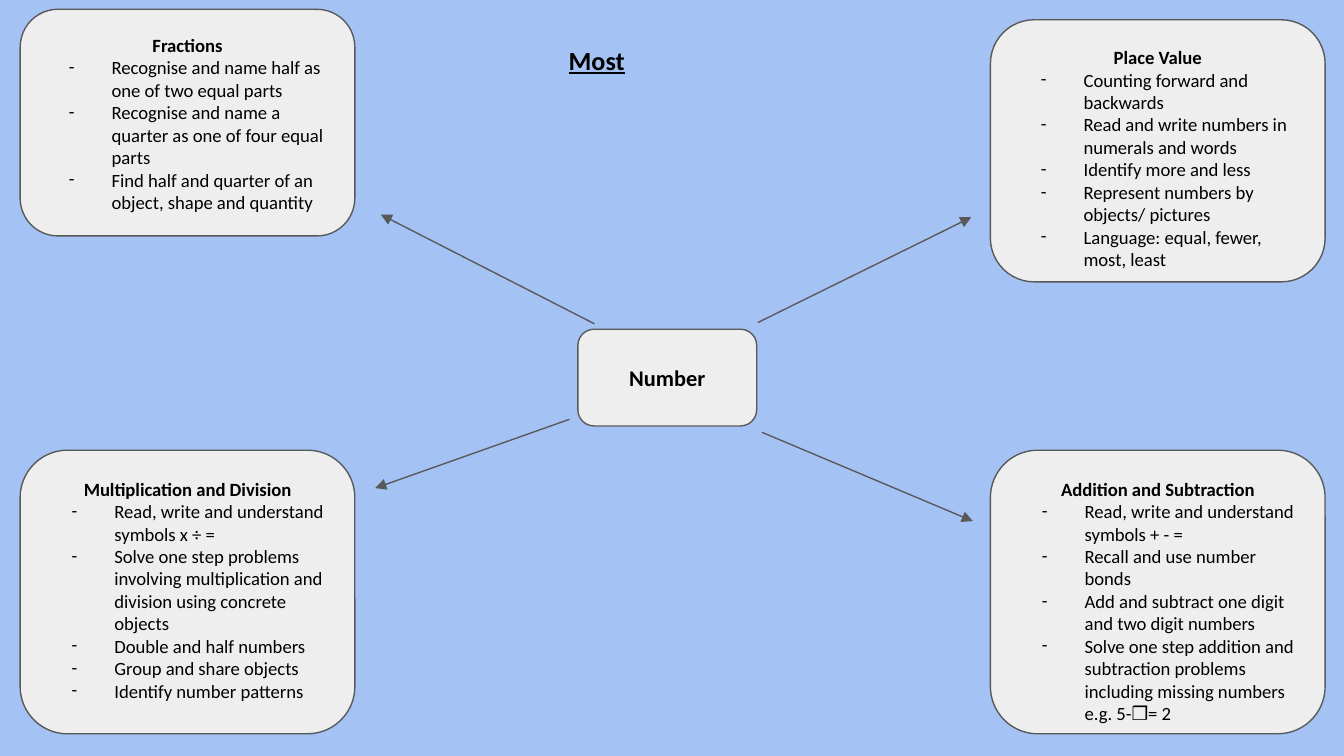
from dataclasses import dataclass

from lxml import etree
from pptx import Presentation
from pptx.dml.color import RGBColor
from pptx.enum.shapes import MSO_CONNECTOR, MSO_SHAPE
from pptx.enum.text import MSO_ANCHOR, PP_ALIGN
from pptx.oxml.ns import qn
from pptx.util import Pt

ROUND = MSO_SHAPE.ROUNDED_RECTANGLE
STRAIGHT = MSO_CONNECTOR.STRAIGHT
TOP, MIDDLE = MSO_ANCHOR.TOP, MSO_ANCHOR.MIDDLE
LEFT, CENTER = PP_ALIGN.LEFT, PP_ALIGN.CENTER


@dataclass(frozen=True)
class Theme:
    back: RGBColor = RGBColor(0xA4, 0xC2, 0xF4)
    panel: RGBColor = RGBColor(0xEE, 0xEE, 0xEE)
    edge: RGBColor = RGBColor(0x59, 0x59, 0x59)
    ink: RGBColor = RGBColor(0, 0, 0)
    font: str = "Calibri"
    title: float = 14
    hub: float = 12
    body: float = 10
    rule: float = 0.75
    inset: float = 7.2
    indent: float = 36
    hang: float = 22.9


THEME = Theme()

LEFT_X, RIGHT_X, WIDE = 10.8, 530.6, 179.3
LOW_Y, LOW_H = 241.2, 151.9

HUB = (309.6, 176.4, 95.8, 51.8)

# Each topic: box, heading, points
TOPICS = [
    ((LEFT_X, 5, WIDE, 121.4), "Fractions", [
        "Recognise and name half as one of two equal parts",
        "Recognise and name a quarter as one of four equal parts",
        "Find half and quarter of an object, shape and quantity",
    ]),
    ((RIGHT_X, 10.6, WIDE, 140.4), "Place Value", [
        "Counting forward and backwards",
        "Read and write numbers in numerals and words",
        "Identify more and less",
        "Represent numbers by objects/ pictures",
        "Language: equal, fewer, most, least",
    ]),
    ((LEFT_X, LOW_Y, WIDE, LOW_H), "Multiplication and Division", [
        "Read, write and understand symbols x ÷ =",
        "Solve one step problems involving multiplication and division "
        "using concrete objects",
        "Double and half numbers",
        "Group and share objects",
        "Identify number patterns",
    ]),
    ((RIGHT_X, LOW_Y, WIDE, LOW_H), "Addition and Subtraction", [
        "Read, write and understand symbols + - =",
        "Recall and use number bonds",
        "Add and subtract one digit and two digit numbers",
        "Solve one step addition and subtraction problems including "
        "missing numbers e.g. 5-❒= 2",
    ]),
]

# From the hub out to each topic
ARROWS = [
    ((318.5, 173.5), (204, 115)),
    ((406, 172.8), (520.4, 116.4)),
    ((305, 224.7), (201, 261.5)),
    ((408.2, 231.6), (521.2, 279.2)),
]


def write(para, text, size=THEME.body, bold=False, under=False,
          align=LEFT, dash=False):
    para.alignment = align
    run = para.add_run()
    run.text = text
    font = run.font
    font.name, font.size = THEME.font, Pt(size)
    font.bold, font.underline = bold, under
    font.color.rgb = THEME.ink
    if dash:
        props = para._p.get_or_add_pPr()
        props.set("marL", str(Pt(THEME.indent)))
        props.set("indent", str(-Pt(THEME.hang)))
        color = etree.SubElement(props, qn("a:buClr"))
        etree.SubElement(color, qn("a:srgbClr"), val=str(THEME.ink))
        etree.SubElement(props, qn("a:buFont"), typeface=THEME.font)
        etree.SubElement(props, qn("a:buChar"), char="-")


def frame(shape, anchor=TOP):
    """Set wrapping, margins and anchor, and return the text frame."""
    text = shape.text_frame
    text.word_wrap = True
    text.vertical_anchor = anchor
    text.margin_left = text.margin_right = Pt(THEME.inset)
    text.margin_top = text.margin_bottom = Pt(THEME.inset)
    return text


def panel(slide, box, anchor=TOP):
    shape = slide.shapes.add_shape(ROUND, *map(Pt, box))
    shape.shadow.inherit = False
    shape.fill.solid()
    shape.fill.fore_color.rgb = THEME.panel
    shape.line.color.rgb = THEME.edge
    shape.line.width = Pt(THEME.rule)
    return frame(shape, anchor)


def title(slide, box):
    text = frame(slide.shapes.add_textbox(*map(Pt, box)))
    write(text.paragraphs[0], "Most", size=THEME.title, bold=True, under=True)


def hub(slide, box):
    text = panel(slide, box, MIDDLE)
    write(text.paragraphs[0], "Number", size=THEME.hub, bold=True,
          align=CENTER)


def topic(slide, box, head, points):
    text = panel(slide, box)
    write(text.paragraphs[0], head, bold=True, align=CENTER)
    for point in points:
        write(text.add_paragraph(), point, dash=True)


def arrow(slide, start, end):
    link = slide.shapes.add_connector(STRAIGHT, *map(Pt, start + end))
    link.line.color.rgb = THEME.edge
    link.line.width = Pt(THEME.rule)
    etree.SubElement(link.line._get_or_add_ln(), qn("a:tailEnd"),
                     type="triangle", w="med", len="med")
    etree.SubElement(link._element.spPr, qn("a:effectLst"))


def main():
    deck = Presentation()
    deck.slide_width, deck.slide_height = Pt(720), Pt(405)
    slide = deck.slides.add_slide(deck.slide_layouts[6])
    fill = slide.background.fill
    fill.solid()
    fill.fore_color.rgb = THEME.back

    hub(slide, HUB)
    for box, head, points in TOPICS:
        topic(slide, box, head, points)
    for start, end in ARROWS:
        arrow(slide, start, end)
    title(slide, (297.5, 16.5, 157.7, 37.4))
    deck.save("out.pptx")


if __name__ == "__main__":
    main()
